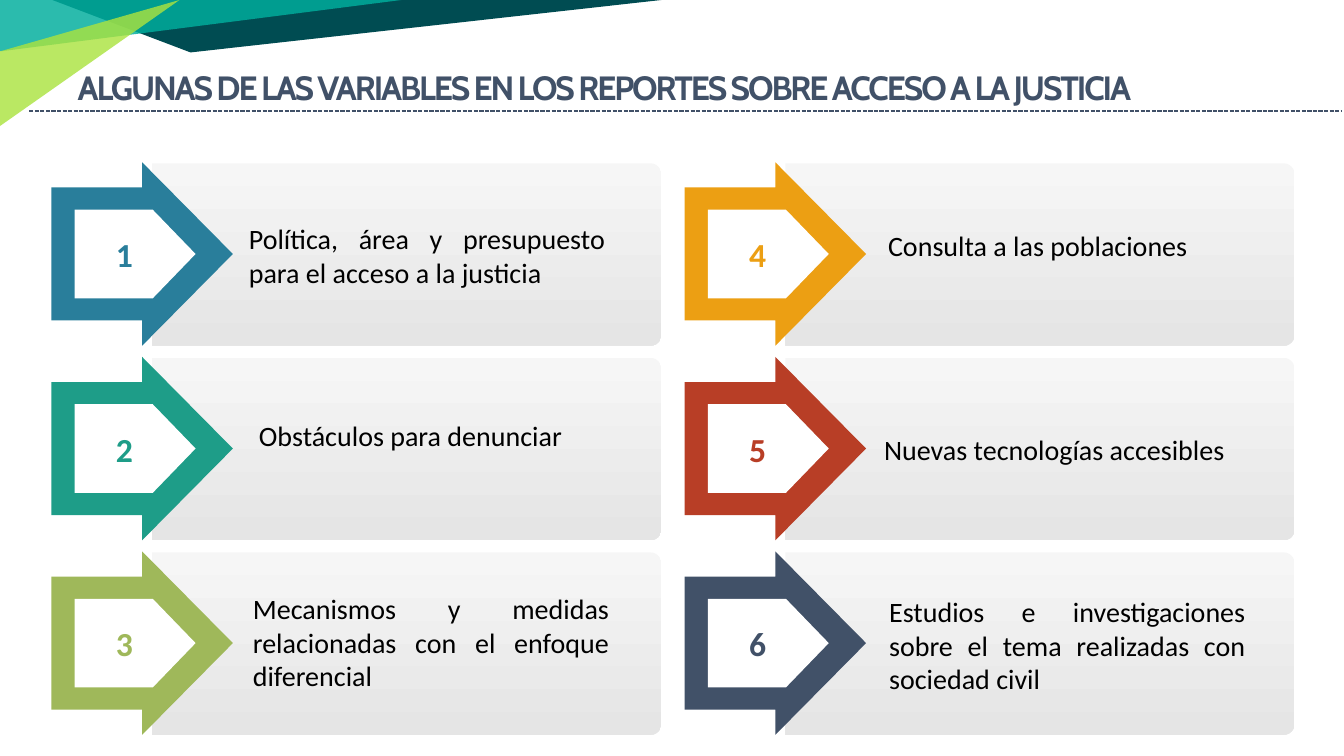
"""Build a slide with six numbered variables on access to justice."""
from dataclasses import dataclass

from lxml.etree import SubElement
from pptx import Presentation
from pptx.dml.color import RGBColor
from pptx.enum.dml import MSO_LINE
from pptx.enum.shapes import MSO_CONNECTOR, MSO_SHAPE
from pptx.enum.text import MSO_ANCHOR, MSO_AUTO_SIZE, PP_ALIGN
from pptx.oxml.ns import qn
from pptx.util import Inches, Pt


@dataclass(frozen=True)
class Theme:
    """Colours, fonts and type sizes of the slide."""
    navy: str = "415168"
    dark_teal: str = "004C52"
    teal: str = "00AE9D"
    lime: str = "ABE33F"
    white: str = "FFFFFF"
    black: str = "000000"
    card_top: str = "F6F6F6"
    card_bottom: str = "E5E5E5"
    accents: tuple = ("297E9B", "1E9D88", "9FB85A", "EC9F13", "B83E26", "415168")
    heading_font: str = "Cabin"
    body_font: str = "Calibri"
    heading_size: int = 24
    body_size: int = 20


THEME = Theme()
TITLE = "ALGUNAS DE LAS VARIABLES EN LOS REPORTES SOBRE ACCESO A LA JUSTICIA"
VARIABLES = [
    ("Política, área y presupuesto para el acceso a la justicia", 2.37, 2.15, 0.77),
    ("Obstáculos para denunciar", 2.47, 4.1, 0.44),
    ("Mecanismos y medidas relacionadas con el enfoque diferencial", 2.41, 5.82, 1.11),
    ("Consulta a las poblaciones", 8.71, 2.22, 0.44),
    ("Nuevas tecnologías accesibles", 8.67, 4.24, 0.44),
    ("Estudios e investigaciones sobre el tema realizadas con sociedad civil",
     8.72, 5.85, 1.11),
]
RIBBONS = [
    ([(6.56, 0), (0.52, 0), (1.89, 0.52)], THEME.dark_teal, 100),
    ([(0, 0.51), (0, 0), (3.98, 0)], THEME.teal, 83),
    ([(0, 0.51), (0, 1.25), (1.78, 0)], THEME.lime, 81),
]
ROWS = 3
COLUMN_STEP, ROW_STEP = 6.28, 1.93
FIRST_LEFT, FIRST_TOP = 0.51, 1.61


def write_text(shape, text, *, font=THEME.body_font, size=THEME.body_size,
               color=THEME.black, bold=False, align=PP_ALIGN.LEFT,
               anchor=MSO_ANCHOR.TOP, spacing=0):
    """Write one formatted paragraph into a shape."""
    frame = shape.text_frame
    frame.word_wrap = True
    frame.auto_size = MSO_AUTO_SIZE.NONE
    frame.vertical_anchor = anchor
    paragraph = frame.paragraphs[0]
    paragraph.alignment = align
    run = paragraph.add_run()
    run.text = text
    run.font.name = font
    run.font.size = Pt(size)
    run.font.bold = bold
    run.font.color.rgb = RGBColor.from_string(color)
    if spacing:
        run.font._element.set("spc", str(int(spacing * 100)))


def paint(shape, color, opacity=100):
    """Give a shape a flat fill without outline or shadow."""
    shape.shadow.inherit = False
    shape.line.fill.background()
    shape.fill.solid()
    shape.fill.fore_color.rgb = RGBColor.from_string(color)
    if opacity < 100:
        tint = shape._element.spPr.find(qn("a:solidFill"))[0]
        SubElement(tint, qn("a:alpha"), val=str(opacity * 1000))


def add_block(slide, preset, left, top, width, height, color, adjustments):
    """Add a flat preset shape."""
    block = slide.shapes.add_shape(
        preset, Inches(left), Inches(top), Inches(width), Inches(height))
    for index, value in enumerate(adjustments):
        block.adjustments[index] = value
    paint(block, color)
    return block


def add_ribbon(slide, points, color, opacity):
    """Add one triangle of the corner decoration."""
    start, *others = [(Inches(x), Inches(y)) for x, y in points]
    outline = slide.shapes.build_freeform(*start)
    outline.add_line_segments(others, close=True)
    paint(outline.convert_to_shape(), color, opacity)


def add_title(slide):
    """Fill the title placeholder and draw the dashed rule below it."""
    title = slide.shapes.title
    title.left, title.top = Inches(0.67), Inches(0.61)
    title.width, title.height = Inches(12.6), Inches(0.5)
    write_text(title, TITLE, font=THEME.heading_font, size=THEME.heading_size,
               color=THEME.navy, bold=True, spacing=-1.5)
    rule = slide.shapes.add_connector(
        MSO_CONNECTOR.STRAIGHT, Inches(0.29), Inches(1.1), Inches(13.31), Inches(1.1))
    rule.line.color.rgb = RGBColor.from_string(THEME.navy)
    rule.line.width = Pt(1)
    rule.line.dash_style = MSO_LINE.SQUARE_DOT
    SubElement(rule._element.spPr, qn("a:effectLst"))


def add_card(slide, left, top):
    """Add a grey card with rounded right corners."""
    card = add_block(slide, MSO_SHAPE.ROUND_2_SAME_RECTANGLE, left + 2.62, top - 1.61,
                     1.81, 5.05, THEME.card_top, (0.061, 0))
    card.rotation = 90
    card.fill.gradient()
    card.fill.gradient_angle = 0
    for stop, color in zip(card.fill.gradient_stops, (THEME.card_top, THEME.card_bottom)):
        stop.color.rgb = RGBColor.from_string(color)


def add_variable(slide, index):
    """Add a card with its numbered arrow."""
    column, row = divmod(index, ROWS)
    left = FIRST_LEFT + column * COLUMN_STEP
    top = FIRST_TOP + row * ROW_STEP
    color = THEME.accents[index]
    add_card(slide, left, top)
    add_block(slide, MSO_SHAPE.RIGHT_ARROW, left, top, 1.8, 1.82, color, (0.725, 0.5))
    badge = add_block(slide, MSO_SHAPE.PENTAGON, left + 0.23, top + 0.47, 1.2, 0.88,
                      THEME.white, (0.483,))
    write_text(badge, str(index + 1), size=THEME.heading_size, color=color, bold=True,
               align=PP_ALIGN.CENTER, anchor=MSO_ANCHOR.MIDDLE)


def add_label(slide, text, left, top, height):
    """Add the justified wording of a variable."""
    label = slide.shapes.add_textbox(
        Inches(left), Inches(top), Inches(3.73), Inches(height))
    write_text(label, text, align=PP_ALIGN.JUSTIFY)


def main():
    """Assemble and save the slide."""
    presentation = Presentation()
    presentation.slide_width, presentation.slide_height = Inches(13.33), Inches(7.5)
    slide = presentation.slides.add_slide(presentation.slide_layouts[5])
    add_title(slide)
    for ribbon in RIBBONS:
        add_ribbon(slide, *ribbon)
    for index, variable in enumerate(VARIABLES):
        add_variable(slide, index)
        add_label(slide, *variable)
    presentation.save("out.pptx")


if __name__ == "__main__":
    main()
